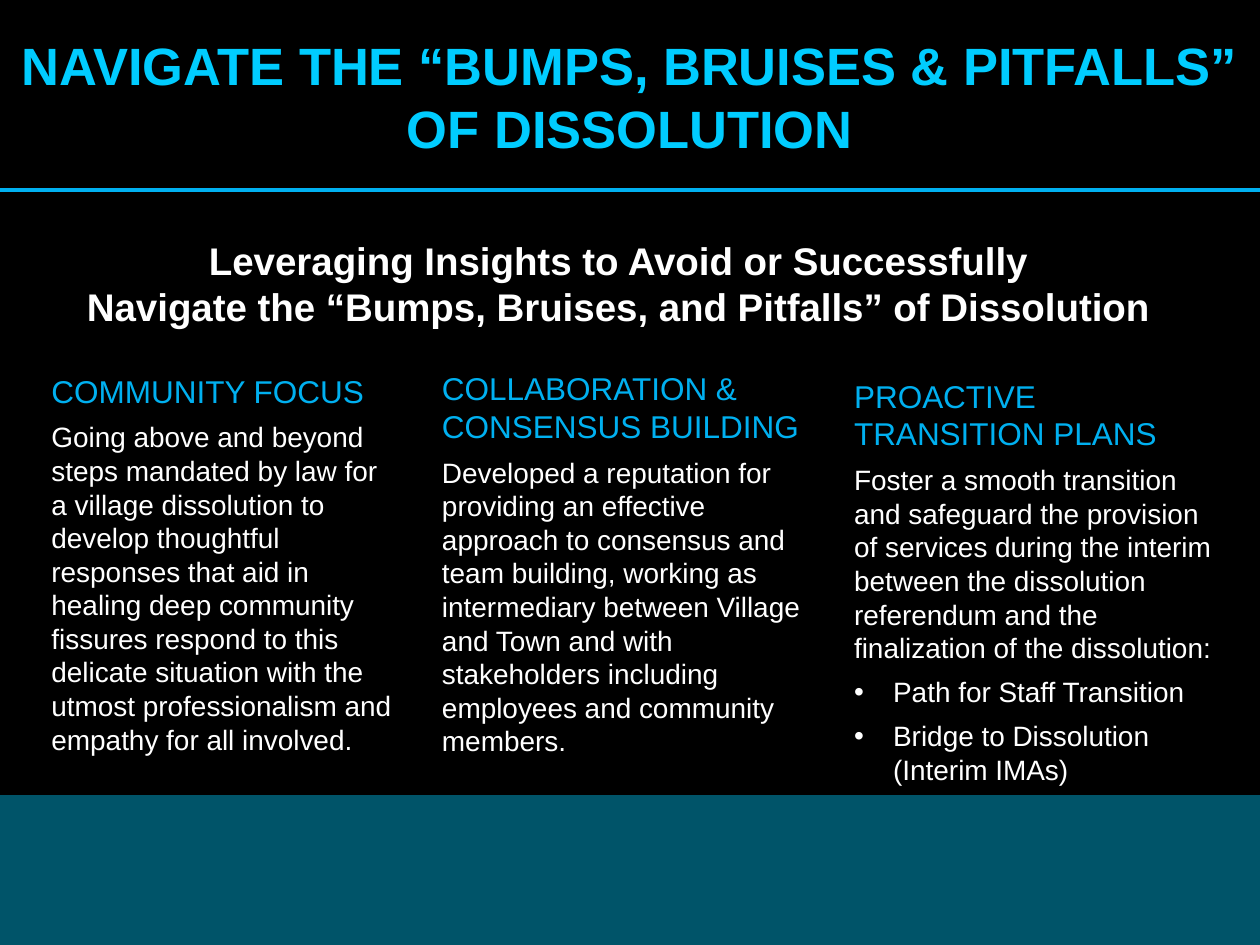
"""Build the slide on navigating a village dissolution."""
from dataclasses import dataclass

from lxml import etree
from pptx import Presentation
from pptx.dml.color import RGBColor
from pptx.enum.shapes import MSO_CONNECTOR, MSO_SHAPE
from pptx.enum.text import MSO_AUTO_SIZE, PP_ALIGN
from pptx.oxml.ns import qn
from pptx.slide import Slide
from pptx.util import Inches, Pt

CENTER, LEFT = PP_ALIGN.CENTER, PP_ALIGN.LEFT
STRAIGHT = MSO_CONNECTOR.STRAIGHT
RECTANGLE = MSO_SHAPE.RECTANGLE
FIT_SHAPE = MSO_AUTO_SIZE.SHAPE_TO_FIT_TEXT
COLORS = {
    "background": "000000",
    "title": "00CCFF",
    "accent": "00B0F0",
    "band": "005469",
    "body": "FFFFFF",
}


@dataclass(frozen=True)
class Style:
    size: int
    color: str
    bold: bool = False
    alignment: PP_ALIGN = LEFT
    space_after: int = 6
    margin: float = 0
    indent: float = 0
    bullet: str = ""


@dataclass(frozen=True)
class TextBlock:
    left: float
    top: float
    width: float
    height: float
    paragraphs: tuple[tuple[str, Style], ...]


TITLE = Style(30, "title", bold=True, alignment=CENTER, space_after=0)
SUBTITLE = Style(22, "body", bold=True, alignment=CENTER)
HEADING = Style(18, "accent", margin=0.06)
BODY = Style(16, "body", margin=0.06)
BULLET = Style(16, "body", margin=0.37, indent=-0.31, bullet="•")

BLOCKS = (
    TextBlock(0, 0.21, 10, 1.11, (
        ("NAVIGATE THE “BUMPS, BRUISES & PITFALLS” OF DISSOLUTION", TITLE),
    )),
    TextBlock(0.23, 1.83, 9.36, 0.84, (
        ("Leveraging Insights to Avoid or Successfully\v"
         "Navigate the “Bumps, Bruises, and Pitfalls” of Dissolution", SUBTITLE),
    )),
    TextBlock(0.25, 2.9, 2.98, 3.18, (
        ("COMMUNITY FOCUS", HEADING),
        ("Going above and beyond steps mandated by law for a village dissolution "
         "to develop thoughtful responses that aid in healing deep community "
         "fissures respond to this delicate situation with the utmost "
         "professionalism and empathy for all involved.", BODY),
    )),
    TextBlock(3.35, 2.88, 3.14, 3.21, (
        ("COLLABORATION & CONSENSUS BUILDING", HEADING),
        ("Developed a reputation for providing an effective approach to consensus "
         "and team building, working as intermediary between Village and Town and "
         "with stakeholders including employees and community members.", BODY),
    )),
    TextBlock(6.62, 2.94, 3.15, 3.38, (
        ("PROACTIVE TRANSITION PLANS", HEADING),
        ("Foster a smooth transition and safeguard the provision of services "
         "during the interim between the dissolution referendum and the "
         "finalization of the dissolution:", BODY),
        ("Path for Staff Transition", BULLET),
        ("Bridge to Dissolution (Interim IMAs)", BULLET),
    )),
)


def color(name: str) -> RGBColor:
    """Return the named palette colour."""
    return RGBColor.from_string(COLORS[name])


def add_divider(slide: Slide, top: float) -> None:
    """Draw the full-width rule below the title."""
    divider = slide.shapes.add_connector(
        STRAIGHT, Inches(0), Inches(top), Inches(10), Inches(top))
    divider.line.color.rgb = color("accent")
    divider.line.width = Pt(2.25)
    etree.SubElement(divider._element.spPr, qn("a:effectLst"))


def add_band(slide: Slide, top: float, height: float) -> None:
    """Draw the coloured band at the foot of the slide."""
    band = slide.shapes.add_shape(
        RECTANGLE, Inches(0), Inches(top), Inches(10), Inches(height))
    band.shadow.inherit = False
    band.fill.solid()
    band.fill.fore_color.rgb = color("band")
    band.line.fill.background()


def add_text_block(slide: Slide, block: TextBlock) -> None:
    """Add a wrapped text box with styled paragraphs."""
    box = slide.shapes.add_textbox(
        Inches(block.left), Inches(block.top), Inches(block.width), Inches(block.height))
    frame = box.text_frame
    frame.word_wrap = True
    frame.auto_size = FIT_SHAPE
    for index, (text, style) in enumerate(block.paragraphs):
        paragraph = frame.add_paragraph() if index else frame.paragraphs[0]
        paragraph.text = text
        paragraph_format = {
            "alignment": style.alignment,
            "space_after": Pt(style.space_after),
        }
        for name, value in paragraph_format.items():
            setattr(paragraph, name, value)
        properties = paragraph._p.get_or_add_pPr()
        properties.set("marL", str(Inches(style.margin)))
        properties.set("indent", str(Inches(style.indent)))
        if style.bullet:
            etree.SubElement(properties, qn("a:buFont"), typeface="Arial")
            etree.SubElement(properties, qn("a:buChar"), char=style.bullet)
        font_format = {"name": "Arial", "size": Pt(style.size), "bold": style.bold}
        for run in paragraph.runs:
            for name, value in font_format.items():
                setattr(run.font, name, value)
            run.font.color.rgb = color(style.color)


def main() -> None:
    """Create and save the presentation."""
    presentation = Presentation()
    presentation.slide_width = Inches(10)
    presentation.slide_height = Inches(7.5)
    slide = presentation.slides.add_slide(presentation.slide_layouts[6])
    slide.background.fill.solid()
    slide.background.fill.fore_color.rgb = color("background")
    add_divider(slide, 1.51)
    add_band(slide, 6.31, 1.19)
    for block in BLOCKS:
        add_text_block(slide, block)
    presentation.save("out.pptx")


if __name__ == "__main__":
    main()
